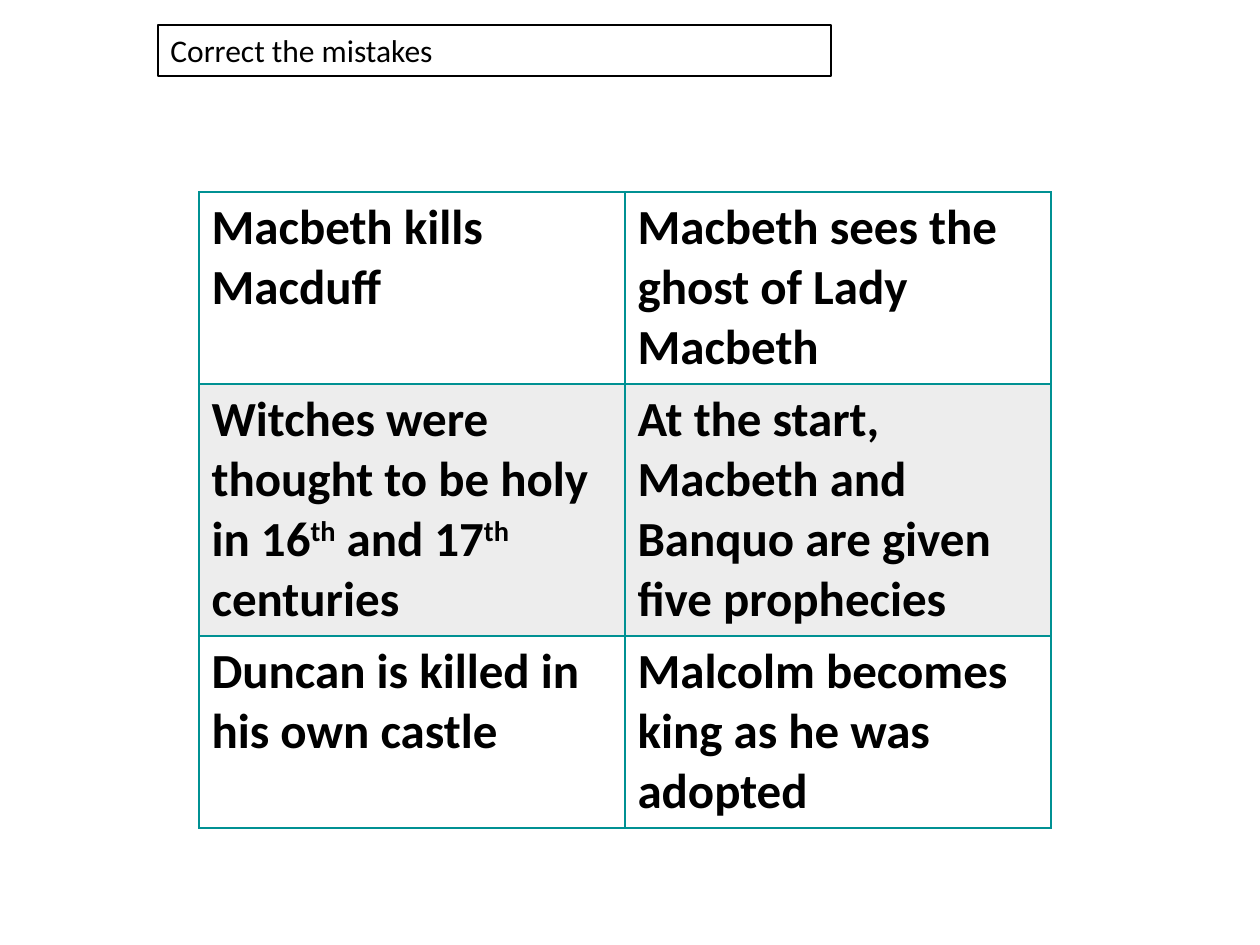
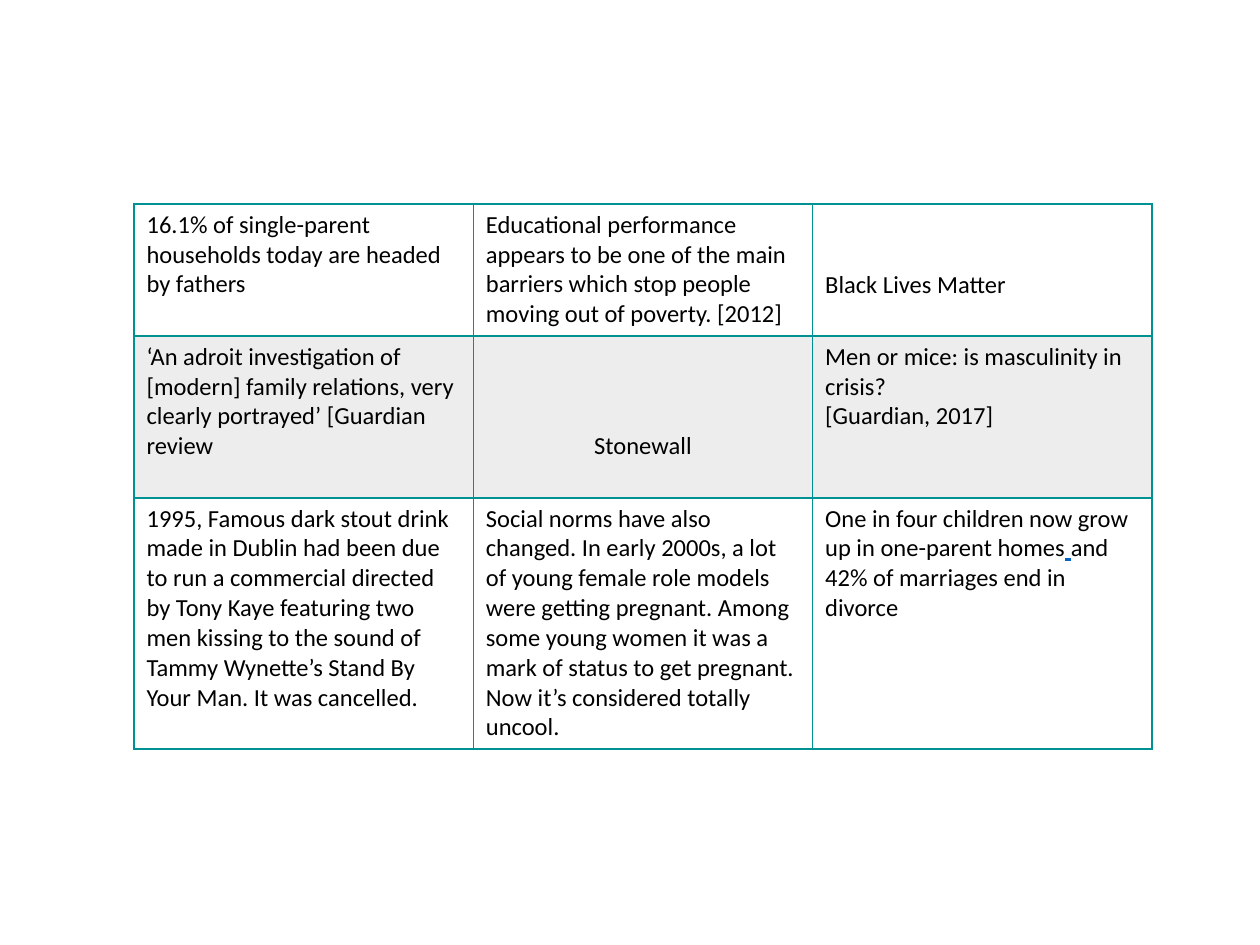
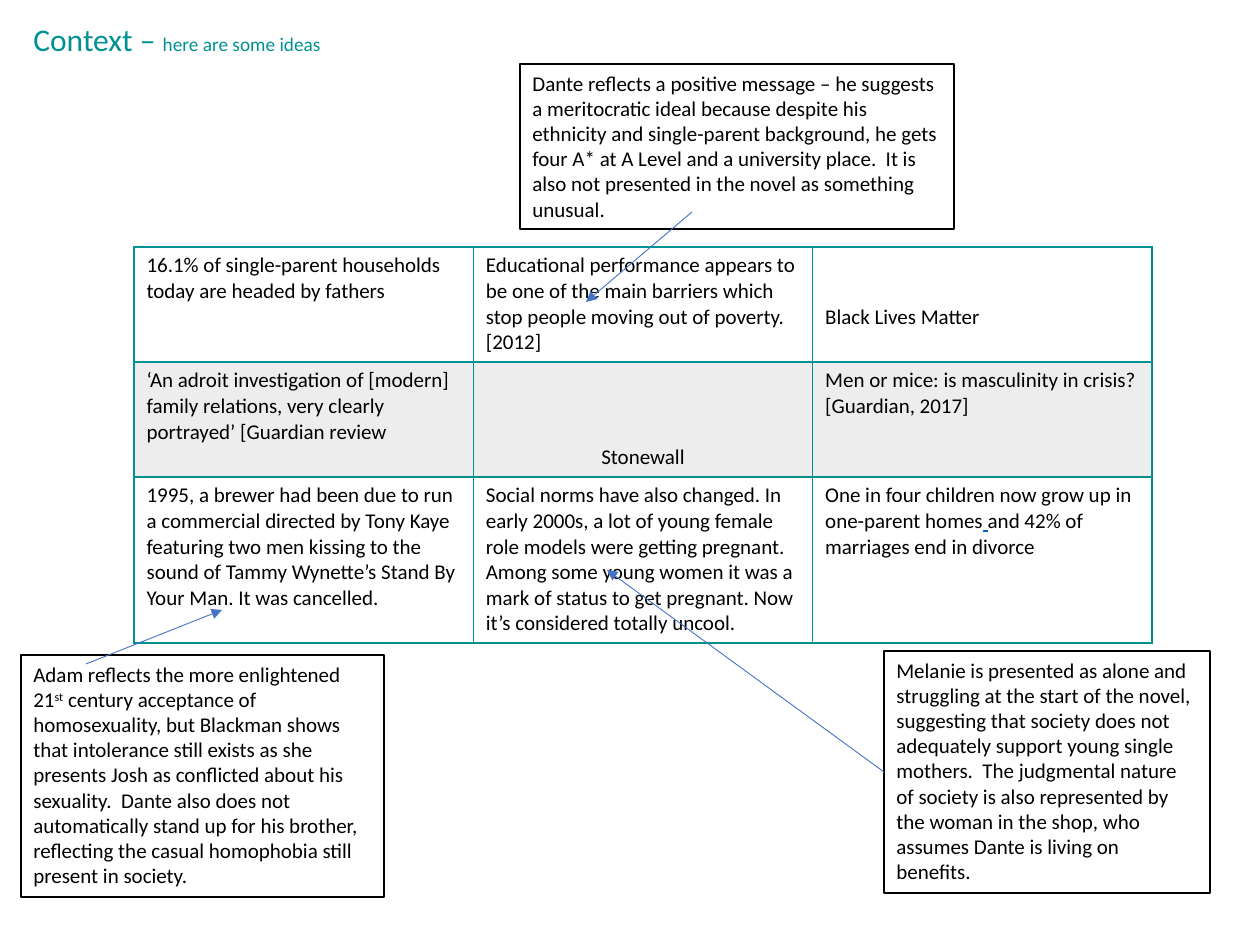
from dataclasses import dataclass

from lxml import etree
from pptx import Presentation
from pptx.dml.color import RGBColor
from pptx.enum.shapes import MSO_CONNECTOR, MSO_SHAPE
from pptx.enum.text import MSO_ANCHOR, PP_ALIGN
from pptx.oxml import parse_xml
from pptx.oxml.ns import nsdecls, qn
from pptx.util import Emu, Pt

STRAIGHT = MSO_CONNECTOR.STRAIGHT
RECTANGLE = MSO_SHAPE.RECTANGLE
TOP = MSO_ANCHOR.TOP
LEFT, CENTER = PP_ALIGN.LEFT, PP_ALIGN.CENTER

EMU_PER_PX = 914400 / 126
LINE_PX_PER_PT = 2.135
CELL_MARGIN_PX = 6
LEFT_SIDE = 1
FONT = "Calibri"

BLACK = RGBColor(0x00, 0x00, 0x00)
WHITE = RGBColor(0xFF, 0xFF, 0xFF)
TEAL = RGBColor(0x00, 0x91, 0x93)
BAND_GREY = RGBColor(0xED, 0xED, 0xED)
ARROW_BLUE = RGBColor(0x44, 0x72, 0xC4)
LINK_BLUE = RGBColor(0x05, 0x63, 0xC1)

RAISED = {"baseline": 30000}
LINKED = {"color": LINK_BLUE, "underline": True}


@dataclass
class Entry:
    """A table entry with its paragraphs, drop in lines and alignment."""
    paragraphs: list
    drop: int = 0
    align: PP_ALIGN = LEFT


MISTAKES = [
    [Entry(["Macbeth kills Macduff"]),
     Entry(["Macbeth sees the ghost of Lady Macbeth"])],
    [Entry([[("Witches were thought to be holy in 16", {}), ("th", RAISED),
             (" and 17", {}), ("th", RAISED), (" centuries", {})]]),
     Entry(["At the start, Macbeth and Banquo are given five prophecies"])],
    [Entry(["Duncan is killed in his own castle"]),
     Entry(["Malcolm becomes king as he was adopted"])],
]

DANTE = ("Dante reflects a positive message – he suggests a meritocratic ideal "
         "because despite his ethnicity and single-parent background, he gets "
         "four A* at A Level and a university place.  It is also not presented "
         "in the novel as something unusual.")
MELANIE = ("Melanie is presented as alone and struggling at the start of the "
           "novel, suggesting that society does not adequately support young "
           "single mothers.  The judgmental nature of society is also "
           "represented by the woman in the shop, who assumes Dante is living "
           "on benefits.")
ADAM = [("Adam reflects the more enlightened 21", {}), ("st", RAISED),
        (" century acceptance of homosexuality, but Blackman shows that "
         "intolerance still exists as she presents Josh as conflicted about "
         "his sexuality.  Dante also does not automatically stand up for his "
         "brother, reflecting the casual homophobia still present in society.",
         {})]


def context_entries(advertiser):
    """Return the context facts, naming the given advertiser."""
    return [
        [Entry(["16.1% of single-parent households today are headed by fathers"]),
         Entry(["Educational performance appears to be one of the main barriers "
                "which stop people moving out of poverty. [2012]"]),
         Entry(["Black Lives Matter"], drop=2)],
        [Entry(["‘An adroit investigation of [modern] family relations, very "
                "clearly portrayed’ [Guardian review"]),
         Entry(["Stonewall"], drop=3, align=CENTER),
         Entry(["Men or mice: is masculinity in crisis?", "[Guardian, 2017]"])],
        [Entry([f"1995, {advertiser} had been due to run a commercial directed "
                "by Tony Kaye featuring two men kissing to the sound of Tammy "
                "Wynette’s Stand By Your Man. It was cancelled."]),
         Entry(["Social norms have also changed. In early 2000s, a lot of young "
                "female role models were getting pregnant. Among some young "
                "women it was a mark of status to get pregnant. Now it’s "
                "considered totally uncool."]),
         Entry([[("One in four children now grow up in one-parent homes", {}),
                 (" ", LINKED), ("and 42% of marriages end in divorce", {})]])],
    ]


def px(length):
    """Turn px into EMU."""
    return Emu(round(length * EMU_PER_PX))


def write(frame, paragraphs, size, align=LEFT, bold=False, color=BLACK):
    """Fill a text frame with paragraphs of plain or formatted runs."""
    frame.word_wrap = True
    for index, content in enumerate(paragraphs):
        paragraph = frame.add_paragraph() if index else frame.paragraphs[0]
        paragraph.alignment = align
        runs = [(content, {})] if isinstance(content, str) else content
        for words, extra in runs:
            run = paragraph.add_run()
            run.text = words
            look = {"name": FONT, "size": Pt(size), "bold": bold,
                    "color": color, **extra}
            run.font.color.rgb = look.pop("color")
            baseline = look.pop("baseline", None)
            for name, value in look.items():
                setattr(run.font, name, value)
            if baseline:
                run.font._element.set("baseline", str(baseline))


def rule_cell(cell):
    """Draw the teal border on all four sides of a cell."""
    properties = cell._tc.get_or_add_tcPr()
    for index, side in enumerate(("lnL", "lnR", "lnT", "lnB")):
        properties.insert(index, parse_xml(
            f'<a:{side} {nsdecls("a")} w="12700"><a:solidFill>'
            f'<a:srgbClr val="{TEAL}"/></a:solidFill></a:{side}>'))


def fact_table(slide, box, row_heights, entries, size, bold=False):
    """Place a bordered table with a grey middle band."""
    left, top, width = box
    columns = len(entries[0])
    table = slide.shapes.add_table(
        len(entries), columns, px(left), px(top), px(width),
        px(sum(row_heights))).table
    table.first_row = table.horz_banding = False
    for column in table.columns:
        column.width = px(width / columns)
    for r, (height, row) in enumerate(zip(row_heights, entries)):
        table.rows[r].height = px(height)
        for c, entry in enumerate(row):
            cell = table.cell(r, c)
            cell.margin_top = px(
                CELL_MARGIN_PX + entry.drop * size * LINE_PX_PER_PT)
            write(cell.text_frame, entry.paragraphs, size, entry.align, bold)
            if r % 2:
                cell.fill.solid()
                cell.fill.fore_color.rgb = BAND_GREY
            else:
                cell.fill.background()
            rule_cell(cell)


def note(slide, box, content, size, fill=None):
    """Place a black-outlined box of text and return it."""
    panel = slide.shapes.add_shape(RECTANGLE, *map(px, box))
    panel.shadow.inherit = False
    if fill is None:
        panel.fill.background()
    else:
        panel.fill.solid()
        panel.fill.fore_color.rgb = fill
    panel.line.color.rgb = BLACK
    panel.line.width = Pt(0.75)
    panel.text_frame.vertical_anchor = TOP
    write(panel.text_frame, [content], size)
    return panel


def callout(slide, box, content, start, target, fill=None):
    """Place a note and an arrow given by offsets from its corner."""
    left, top, _, height = box
    panel = note(slide, box, content, 12, fill)
    arrow = slide.shapes.add_connector(
        STRAIGHT, px(left + start[0]), px(top + start[1]),
        px(left + target[0]), px(top + target[1]))
    if start == (0, height // 2):
        arrow.begin_connect(panel, LEFT_SIDE)
    arrow.line.color.rgb = ARROW_BLUE
    arrow.line.width = Pt(0.5)
    etree.SubElement(arrow.line._get_or_add_ln(), qn("a:tailEnd"),
                     type="triangle")
    etree.SubElement(arrow._element.spPr, qn("a:effectLst"))


def heading(slide, box, title, aside):
    """Place a teal title followed by a smaller aside."""
    frame = slide.shapes.add_textbox(*map(px, box)).text_frame
    write(frame, [[(title, {}), (aside, {"size": Pt(11)})]], 18, color=TEAL)


def main():
    """Build the three slides and save them."""
    deck = Presentation()
    deck.slide_width, deck.slide_height = px(1260), px(945)
    mistakes, facts, ideas = (
        deck.slides.add_slide(deck.slide_layouts[6]) for _ in range(3))

    fact_table(mistakes, (199, 192, 852), (192, 252, 192), MISTAKES, 28, True)
    note(mistakes, (158, 25, 673, 51), "Correct the mistakes", 18)

    fact_table(facts, (134, 204, 1018), (132, 162, 251),
               context_entries("Famous dark stout drink made in Dublin"), 14)

    fact_table(ideas, (134, 247, 1018), (115, 115, 166),
               context_entries("a brewer"), 12)
    heading(ideas, (21, 14, 785, 50), "Context – ", "here are some ideas")
    callout(ideas, (520, 64, 434, 165), DANTE, (172, 148), (66, 238))
    callout(ideas, (884, 651, 326, 242), MELANIE, (0, 121), (-277, -81))
    callout(ideas, (21, 655, 363, 242), ADAM, (65, 9), (201, -45), WHITE)

    deck.save("out.pptx")


if __name__ == "__main__":
    main()
